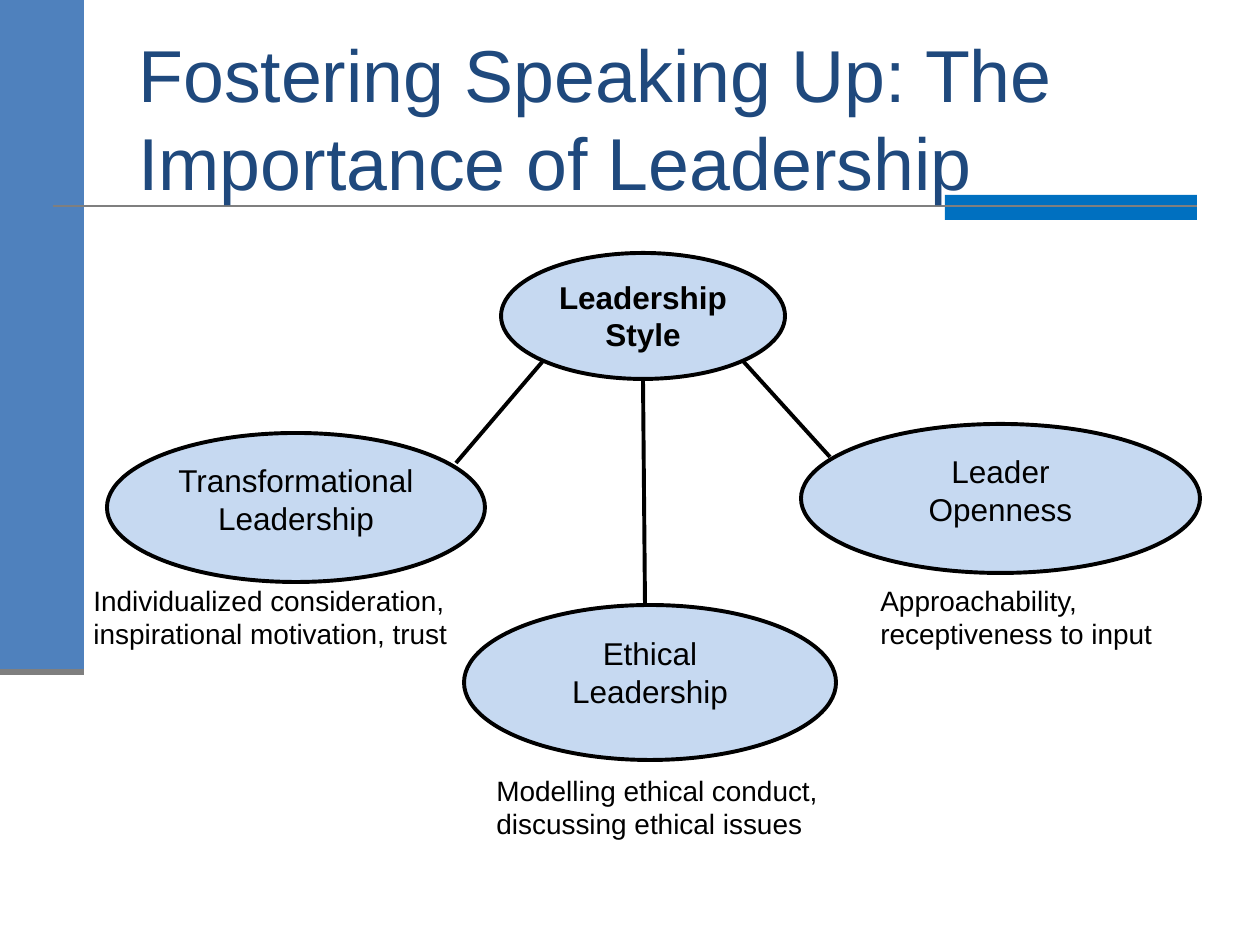
from pptx import Presentation
from pptx.dml.color import RGBColor
from pptx.enum.shapes import MSO_CONNECTOR, MSO_SHAPE
from pptx.enum.text import MSO_ANCHOR, PP_ALIGN
from pptx.oxml.ns import qn
from pptx.util import Pt
from lxml import etree

PX = 914400 / 126


def px(*values):
    return [round(v * PX) for v in values]


def rgb(value):
    return RGBColor.from_string(value)


prs = Presentation()
prs.slide_width, prs.slide_height = px(1260, 945)
s = prs.slides.add_slide(prs.slide_layouts[6])

shapes = [
    (MSO_SHAPE.RECTANGLE, (0, 0, 84, 672), "4F81BD", None, "", False),
    (MSO_SHAPE.RECTANGLE, (945, 195, 252, 25), "0070C0", None, "", False),
    (MSO_SHAPE.OVAL, (501, 253, 284, 126), "C6D9F1", "000000", "Leadership Style", True),
    (MSO_SHAPE.OVAL, (107, 433, 378, 149), "C6D9F1", "000000", "Transformational Leadership", False),
    (MSO_SHAPE.OVAL, (801, 424, 399, 149), "C6D9F1", "000000", "Leader\nOpenness", False),
    (MSO_SHAPE.OVAL, (464, 605, 372, 155), "C6D9F1", "000000", "Ethical Leadership", False),
]
for kind, box, fill, line, text, bold in shapes:
    sp = s.shapes.add_shape(kind, *px(*box))
    sp.shadow.inherit = False
    sp.fill.solid()
    sp.fill.fore_color.rgb = rgb(fill)
    if line is None:
        sp.line.fill.background()
        continue
    sp.line.color.rgb = rgb(line)
    sp.line.width = Pt(2.25)
    tf = sp.text_frame
    tf.text = text
    tf.word_wrap = True
    tf.vertical_anchor = MSO_ANCHOR.TOP
    for p in tf.paragraphs:
        p.alignment = PP_ALIGN.CENTER
        for name, value in {"name": "Arial", "size": Pt(18), "bold": bold}.items():
            setattr(p.runs[0].font, name, value)
        p.runs[0].font.color.rgb = rgb("000000")

lines = [
    ((53, 206, 1197, 206), "7F7F7F", 1.5),
    ((0, 672, 84, 672), "7F7F7F", 3.5),
    ((743, 361, 830, 457), "000000", 2.25),
    ((543, 361, 456, 463), "000000", 2.25),
    ((643, 379, 645, 603), "000000", 2.25),
]
for ends, color, width in lines:
    c = s.shapes.add_connector(MSO_CONNECTOR.STRAIGHT, *px(*ends))
    c.line.color.rgb = rgb(color)
    c.line.width = Pt(width)
    etree.SubElement(c._element.spPr, qn("a:effectLst"))

texts = [
    ((126, 38, 1071, 158), "Fostering Speaking Up: The Importance of Leadership", 42, "1F497D", MSO_ANCHOR.MIDDLE),
    ((484, 767, 483, 81), "Modelling ethical conduct,\vdiscussing ethical issues", 16, "000000", MSO_ANCHOR.TOP),
    ((81, 577, 383, 81), "Individualized consideration, inspirational motivation, trust", 16, "000000", MSO_ANCHOR.TOP),
    ((868, 577, 369, 81), "Approachability, receptiveness to input", 16, "000000", MSO_ANCHOR.TOP),
]
for box, text, size, color, anchor in texts:
    tf = s.shapes.add_textbox(*px(*box)).text_frame
    tf.text = text
    tf.word_wrap = True
    tf.vertical_anchor = anchor
    for r in tf.paragraphs[0].runs:
        for name, value in {"name": "Arial", "size": Pt(size)}.items():
            setattr(r.font, name, value)
        r.font.color.rgb = rgb(color)

prs.save("out.pptx")
